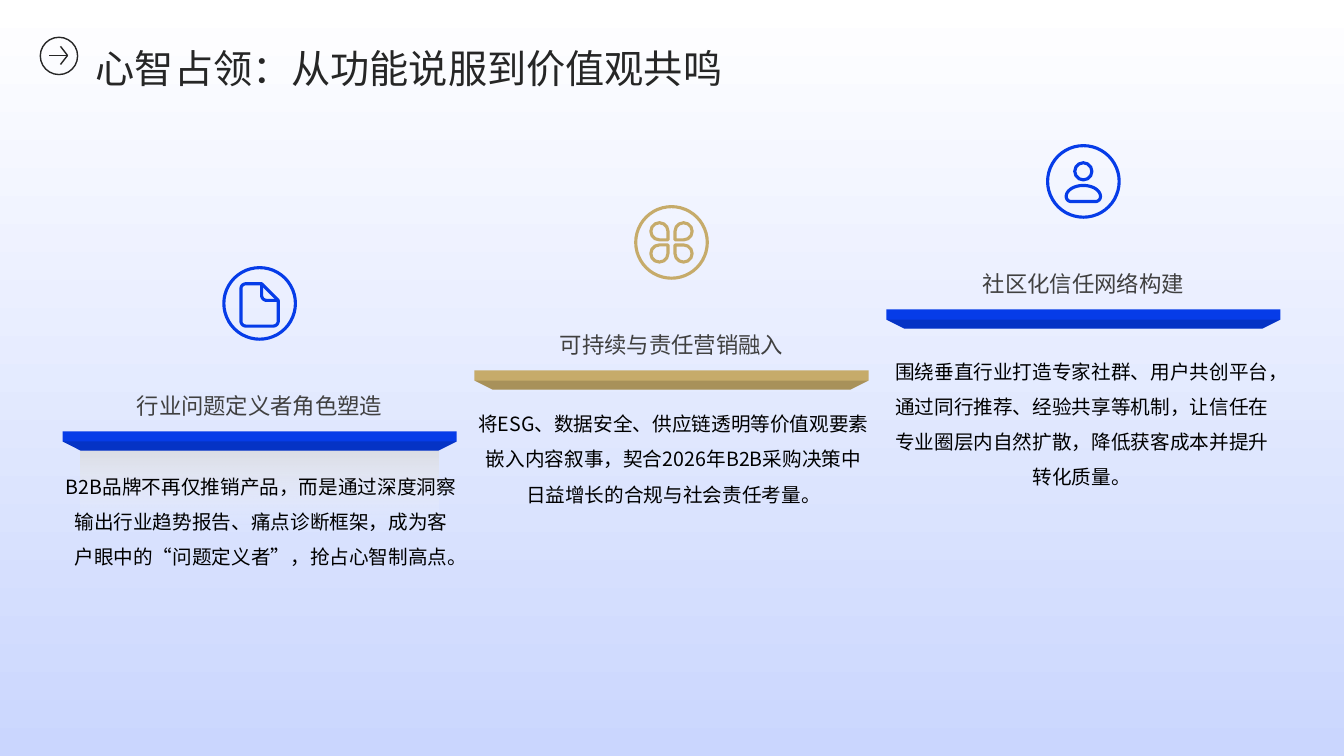
from dataclasses import dataclass
from math import cos, radians, sin

from lxml.etree import SubElement
from pptx import Presentation
from pptx.dml.color import RGBColor
from pptx.enum.shapes import MSO_CONNECTOR as Connector, MSO_SHAPE as Shape
from pptx.enum.text import MSO_ANCHOR as Anchor, PP_ALIGN as Align
from pptx.oxml.ns import qn
from pptx.util import Inches, Pt


@dataclass(frozen=True)
class Theme:
    font: str = "Noto Sans CJK SC"
    white: str = "FFFFFF"
    sky: str = "CAD6FE"
    haze: str = "D9D9D9"
    blue: str = "063CE8"
    gold: str = "C6AB6A"
    black: str = "000000"
    title_ink: str = "262626"
    heading_ink: str = "404040"
    title_size: int = 28
    heading_size: int = 16
    body_size: int = 14
    icon_line: float = 2.25
    arrow_line: float = 1


THEME = Theme()
SHELF_WIDTH = 3.91
BEVEL = 0.18
SHELF_LEFT, SHELF_TOP = 0.62, 4.28
STEP_RIGHT, STEP_UP = 4.085, 0.605


def rgb(value):
    return RGBColor.from_string(value)


def set_opacity(shape, *percents):
    for color, percent in zip(shape._element.spPr.iter(qn("a:srgbClr")), percents):
        SubElement(color, qn("a:alpha")).set("val", str(percent * 1000))


def paint(shape, color):
    shape.shadow.inherit = False
    shape.fill.solid()
    shape.fill.fore_color.rgb = rgb(color)
    shape.line.fill.background()


def stroke(shape, color, width):
    shape.shadow.inherit = False
    shape.fill.background()
    shape.line.color.rgb = rgb(color)
    shape.line.width = Pt(width)


def add_gradient(slide, left, top, width, height, stops):
    panel = slide.shapes.add_shape(
        Shape.RECTANGLE, Inches(left), Inches(top), Inches(width), Inches(height))
    panel.shadow.inherit = False
    panel.line.fill.background()
    panel.fill.gradient()
    panel.fill.gradient_angle = 270
    for stop, (position, color) in zip(panel.fill.gradient_stops, stops):
        stop.position = position
        stop.color.rgb = rgb(color)
    return panel


def add_text(slide, left, top, width, height, wording, size, color, spacing,
             align=Align.CENTER, anchor=Anchor.TOP):
    frame = slide.shapes.add_textbox(
        Inches(left), Inches(top), Inches(width), Inches(height)).text_frame
    frame.word_wrap = True
    frame.vertical_anchor = anchor
    frame.margin_left = frame.margin_right = frame.margin_top = frame.margin_bottom = 0
    paragraph = frame.paragraphs[0]
    paragraph.text = wording
    paragraph.alignment = align
    paragraph.line_spacing = spacing
    font = paragraph.font
    font.name = THEME.font
    font.size = Pt(size)
    font.color.rgb = rgb(color)
    SubElement(font._element, qn("a:ea")).set("typeface", THEME.font)


def add_outline(slide, x, y, points, close=True):
    start, *rest = [(Inches(x + dx), Inches(y + dy)) for dx, dy in points]
    builder = slide.shapes.build_freeform(*start)
    builder.add_line_segments(rest, close=close)
    return builder.convert_to_shape()


def arc(x, y, rx, ry, start, end, steps=12):
    angles = [radians(start + (end - start) * i / steps) for i in range(steps + 1)]
    return [(x + rx * cos(angle), y + ry * sin(angle)) for angle in angles]


def add_round(shapes, x, y, size, color, width, kind=Shape.OVAL, turn=0):
    drawn = shapes.add_shape(
        kind, Inches(x - size / 2), Inches(y - size / 2), Inches(size), Inches(size))
    stroke(drawn, color, width)
    drawn.rotation = turn


def draw_document(slide, x, y, color):
    page = (arc(-0.135, -0.145, 0.05, 0.05, 180, 270)
            + [(0.02, -0.195), (0.185, -0.03)]
            + arc(0.135, 0.175, 0.05, 0.05, 0, 90)
            + arc(-0.135, 0.175, 0.05, 0.05, 90, 180))
    fold = [(0.02, -0.195), *arc(0.07, -0.08, 0.05, 0.05, 180, 90), (0.185, -0.03)]
    stroke(add_outline(slide, x, y, page), color, THEME.icon_line)
    stroke(add_outline(slide, x, y, fold, close=False), color, THEME.icon_line)


def draw_clover(slide, x, y, color):
    for dx, dy, turn in ((-1, -1, 90), (1, -1, 180), (-1, 1, 0), (1, 1, 270)):
        add_round(slide.shapes, x + 0.12 * dx, y + 0.11 * dy, 0.17, color,
                  THEME.icon_line, Shape.TEAR, turn)


def draw_person(slide, x, y, color):
    shoulders = (arc(0, 0.15, 0.17, 0.11, 180, 360, 24)
                 + arc(0.12, 0.15, 0.05, 0.05, 0, 90)
                 + arc(-0.12, 0.15, 0.05, 0.05, 90, 180))
    add_round(slide.shapes, x, y - 0.1, 0.17, color, THEME.icon_line)
    stroke(add_outline(slide, x, y, shoulders), color, THEME.icon_line)


def add_shelf(slide, left, top, color):
    inner = SHELF_WIDTH - BEVEL
    underside = [(SHELF_WIDTH, 0.1), (inner, 0.19), (BEVEL, 0.19), (0, 0.1)]
    paint(add_outline(slide, left, top, [(0, 0), (SHELF_WIDTH, 0), *underside]), color)
    shade = add_outline(slide, left, top, underside)
    paint(shade, THEME.black)
    set_opacity(shade, 15)


def add_step(slide, index, color, draw_icon, heading, body, body_left, body_top):
    left = SHELF_LEFT + STEP_RIGHT * index
    top = SHELF_TOP - STEP_UP * index
    icon_x, icon_y = left + SHELF_WIDTH / 2, top - 1.27
    add_shelf(slide, left, top, color)
    add_round(slide.shapes, icon_x, icon_y, 0.71, color, THEME.icon_line)
    draw_icon(slide, icon_x, icon_y, color)
    add_text(slide, body_left, body_top, 3.88, 1.81, body,
             THEME.body_size, THEME.black, 1.5)
    add_text(slide, left, top - 0.83, SHELF_WIDTH, 0.71, heading,
             THEME.heading_size, THEME.heading_ink, 1.2, anchor=Anchor.BOTTOM)


def add_title(slide, wording):
    add_text(slide, 0.95, 0.3, 11.35, 0.59, wording,
             THEME.title_size, THEME.title_ink, 1.3, align=Align.LEFT)
    badge = slide.shapes.add_group_shape().shapes
    add_round(badge, 0.585, 0.555, 0.37, THEME.title_ink, THEME.arrow_line)
    for x, y in ((0.49, 0.55), (0.6, 0.64), (0.6, 0.46)):
        line = badge.add_connector(
            Connector.STRAIGHT, Inches(x), Inches(y), Inches(0.67), Inches(0.55))
        line.line.color.rgb = rgb(THEME.title_ink)
        line.line.width = Pt(THEME.arrow_line)
        SubElement(line._element.spPr, qn("a:effectLst"))


def main():
    deck = Presentation()
    deck.slide_width, deck.slide_height = Inches(13.33), Inches(7.5)
    slide = deck.slides.add_slide(deck.slide_layouts[6])

    add_gradient(slide, 0, 0, 13.33, 7.5, [(0, THEME.white), (1, THEME.sky)])
    haze = add_gradient(slide, SHELF_LEFT + BEVEL, 4.47, 3.55, 0.98,
                        [(0, THEME.haze), (0.75, THEME.white)])
    set_opacity(haze, 70, 0)

    steps = [
        (THEME.blue, draw_document, "行业问题定义者角色塑造",
         "B2B品牌不再仅推销产品，而是通过深度洞察输出行业趋势报告、痛点诊断框架，"
         "成为客户眼中的“问题定义者”，抢占心智制高点。", 0.65, 4.59),
        (THEME.gold, draw_clover, "可持续与责任营销融入",
         "将ESG、数据安全、供应链透明等价值观要素嵌入内容叙事，"
         "契合2026年B2B采购决策中日益增长的合规与社会责任考量。", 4.74, 3.97),
        (THEME.blue, draw_person, "社区化信任网络构建",
         "围绕垂直行业打造专家社群、用户共创平台，通过同行推荐、经验共享等机制，"
         "让信任在专业圈层内自然扩散，降低获客成本并提升转化质量。", 8.79, 3.45),
    ]
    for index, step in enumerate(steps):
        add_step(slide, index, *step)

    add_title(slide, "心智占领：从功能说服到价值观共鸣")
    deck.save("out.pptx")


if __name__ == "__main__":
    main()
